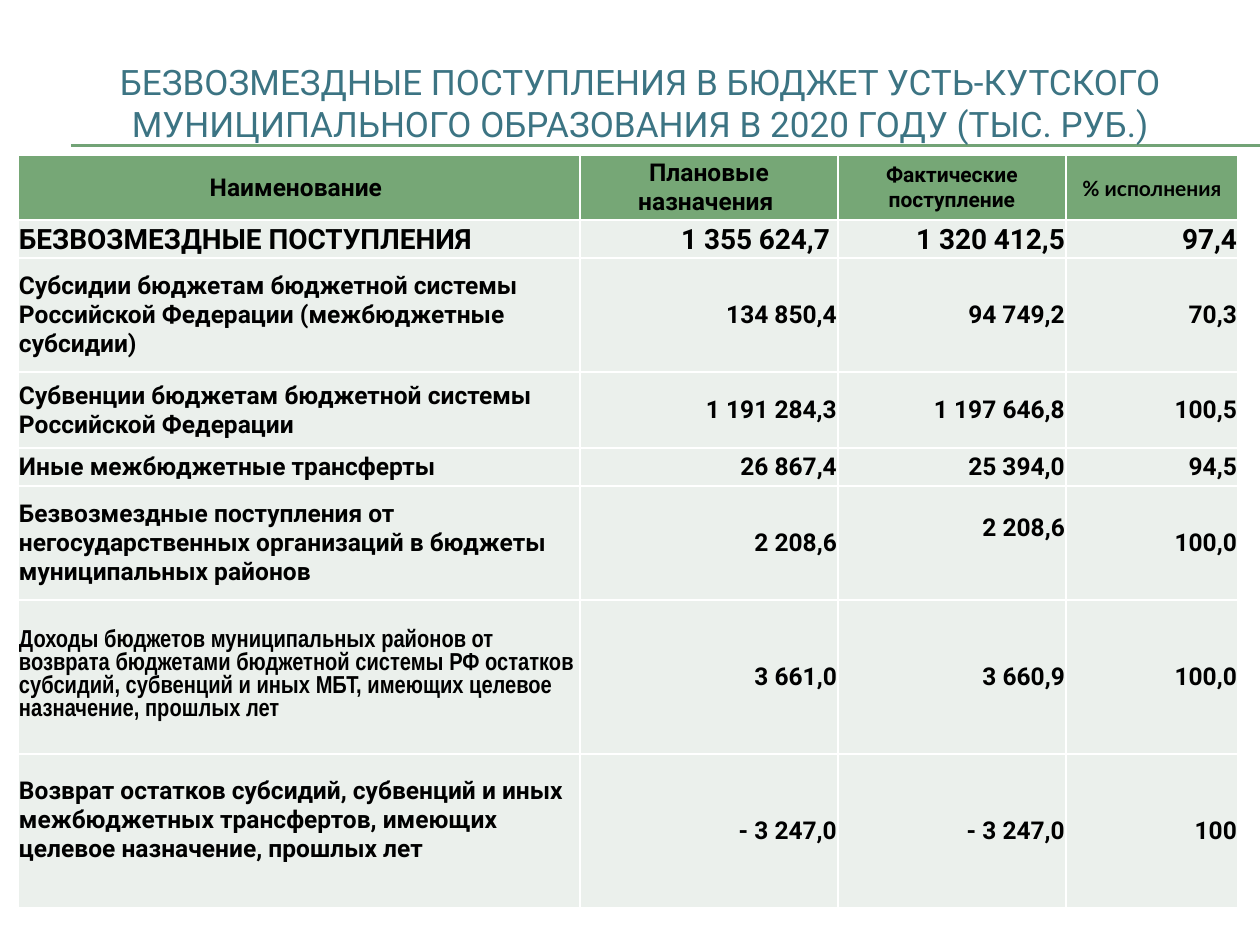
from dataclasses import dataclass

from lxml.etree import SubElement
from pptx import Presentation
from pptx.dml.color import RGBColor
from pptx.enum.shapes import MSO_CONNECTOR
from pptx.enum.text import MSO_ANCHOR, PP_ALIGN
from pptx.oxml.ns import qn
from pptx.util import Emu, Pt

PX_PER_INCH = 126


@dataclass(frozen=True)
class Theme:
    title: str = "3C7483"
    rule: str = "72A376"
    header: str = "76A776"
    body: str = "EBF0EC"
    border: str = "FFFFFF"
    text: str = "000000"
    font: str = "Roboto"
    narrow_font: str = "Arial Narrow"
    alternate_font: str = "Lato"
    title_size: int = 20
    total_size: int = 16
    body_size: int = 14
    small_size: int = 12


THEME = Theme()

COLUMN_WIDTHS = [562, 258, 228, 172]
ROW_HEIGHTS = [65, 38, 114, 76, 38, 114, 154, 154]
ROWS = [
    ["Наименование ", "Плановые назначения ", "Фактические поступление", "% исполнения"],
    ["БЕЗВОЗМЕЗДНЫЕ ПОСТУПЛЕНИЯ", "1 355 624,7 ", "1 320 412,5", "97,4"],
    ["Субсидии бюджетам бюджетной системы Российской Федерации (межбюджетные субсидии)",
     "134 850,4", "94 749,2", "70,3"],
    ["Субвенции бюджетам бюджетной системы Российской Федерации",
     "1 191 284,3", "1 197 646,8", "100,5"],
    ["Иные межбюджетные трансферты", "26 867,4", "25 394,0", "94,5"],
    ["Безвозмездные поступления от негосударственных организаций в бюджеты "
     "муниципальных районов", "2 208,6", "2 208,6", "100,0"],
    ["Доходы бюджетов муниципальных районов от возврата бюджетами бюджетной системы РФ "
     "остатков субсидий, субвенций и иных МБТ, имеющих целевое назначение, прошлых лет",
     "3 661,0", "3 660,9", "100,0"],
    ["Возврат остатков субсидий, субвенций и иных межбюджетных трансфертов, имеющих "
     "целевое назначение, прошлых лет", "- 3 247,0", "- 3 247,0", "100"],
]
TOTAL_ROW = 1
NARROW_CELL = (6, 0)
# Bottom margins of the cells whose text sits above the middle
RAISED_CELLS = {(5, 2): 30, (6, 0): 4, (7, 0): 22}


def px(length):
    return Emu(round(length * 914400 / PX_PER_INCH))


def color(value):
    return RGBColor.from_string(value)


def add_run(paragraph, text, size, font, text_color, bold=False):
    run = paragraph.add_run()
    run.text = text
    run.font.size = Pt(size)
    run.font.name = font
    run.font.bold = bold
    run.font.color.rgb = color(text_color)


def add_rules(slide, left, top, width):
    # Two thin lines, one px apart
    for offset in range(2):
        y = px(top + offset)
        rule = slide.shapes.add_connector(
            MSO_CONNECTOR.STRAIGHT, px(left), y, px(left + width), y)
        rule.line.color.rgb = color(THEME.rule)
        rule.line.width = Pt(0.75)
        SubElement(rule._element.spPr, qn("a:effectLst"))


def add_title(slide, left, top, width, height):
    shape = slide.shapes.add_textbox(px(left), px(top), px(width), px(height))
    frame = shape.text_frame
    frame.word_wrap = True
    frame.vertical_anchor = MSO_ANCHOR.MIDDLE
    paragraph = frame.paragraphs[0]
    paragraph.alignment = PP_ALIGN.CENTER
    add_run(paragraph,
            "БЕЗВОЗМЕЗДНЫЕ ПОСТУПЛЕНИЯ В БЮДЖЕТ УСТЬ-КУТСКОГО "
            "МУНИЦИПАЛЬНОГО ОБРАЗОВАНИЯ В 2020 ГОДУ (ТЫС. РУБ.)",
            THEME.title_size, THEME.font, THEME.title)


def add_borders(cell):
    properties = cell._tc.get_or_add_tcPr()
    for side in ("lnL", "lnR", "lnT", "lnB"):
        line = SubElement(properties, qn(f"a:{side}"), w=str(Pt(1)))
        fill = SubElement(line, qn("a:solidFill"))
        SubElement(fill, qn("a:srgbClr"), val=THEME.border)


def cell_type(row, column):
    """Size and font of the text in a cell."""
    if row == 0:
        size = THEME.body_size if column < 2 else THEME.small_size
        return size, THEME.alternate_font if column == 3 else THEME.font
    if row == TOTAL_ROW:
        return THEME.total_size, THEME.font
    font = THEME.narrow_font if (row, column) == NARROW_CELL else THEME.font
    return THEME.body_size, font


def fill_cell(cell, row, column, text):
    add_borders(cell)
    cell.fill.solid()
    cell.fill.fore_color.rgb = color(THEME.body if row else THEME.header)
    cell.vertical_anchor = MSO_ANCHOR.MIDDLE
    cell.margin_left = cell.margin_right = cell.margin_top = px(1)
    cell.margin_bottom = px(RAISED_CELLS.get((row, column), 0))

    paragraph = cell.text_frame.paragraphs[0]
    if row == 0:
        paragraph.alignment = PP_ALIGN.CENTER
    else:
        paragraph.alignment = PP_ALIGN.RIGHT if column else PP_ALIGN.LEFT
    size, font = cell_type(row, column)
    add_run(paragraph, text, size, font, THEME.text, bold=True)


def add_income_table(slide, left, top):
    table = slide.shapes.add_table(
        len(ROWS), len(COLUMN_WIDTHS), px(left), px(top),
        px(sum(COLUMN_WIDTHS)), px(sum(ROW_HEIGHTS))).table
    for column, width in zip(table.columns, COLUMN_WIDTHS):
        column.width = px(width)
    for row, height in zip(table.rows, ROW_HEIGHTS):
        row.height = px(height)
    for row, texts in enumerate(ROWS):
        for column, text in enumerate(texts):
            fill_cell(table.cell(row, column), row, column, text)


def main():
    presentation = Presentation()
    presentation.slide_width = px(1260)
    presentation.slide_height = px(945)
    slide = presentation.slides.add_slide(presentation.slide_layouts[6])
    add_rules(slide, 71, 145, 1189)
    add_title(slide, 42, 27, 1197, 152)
    add_income_table(slide, 18, 155)
    presentation.save("out.pptx")


if __name__ == "__main__":
    main()
